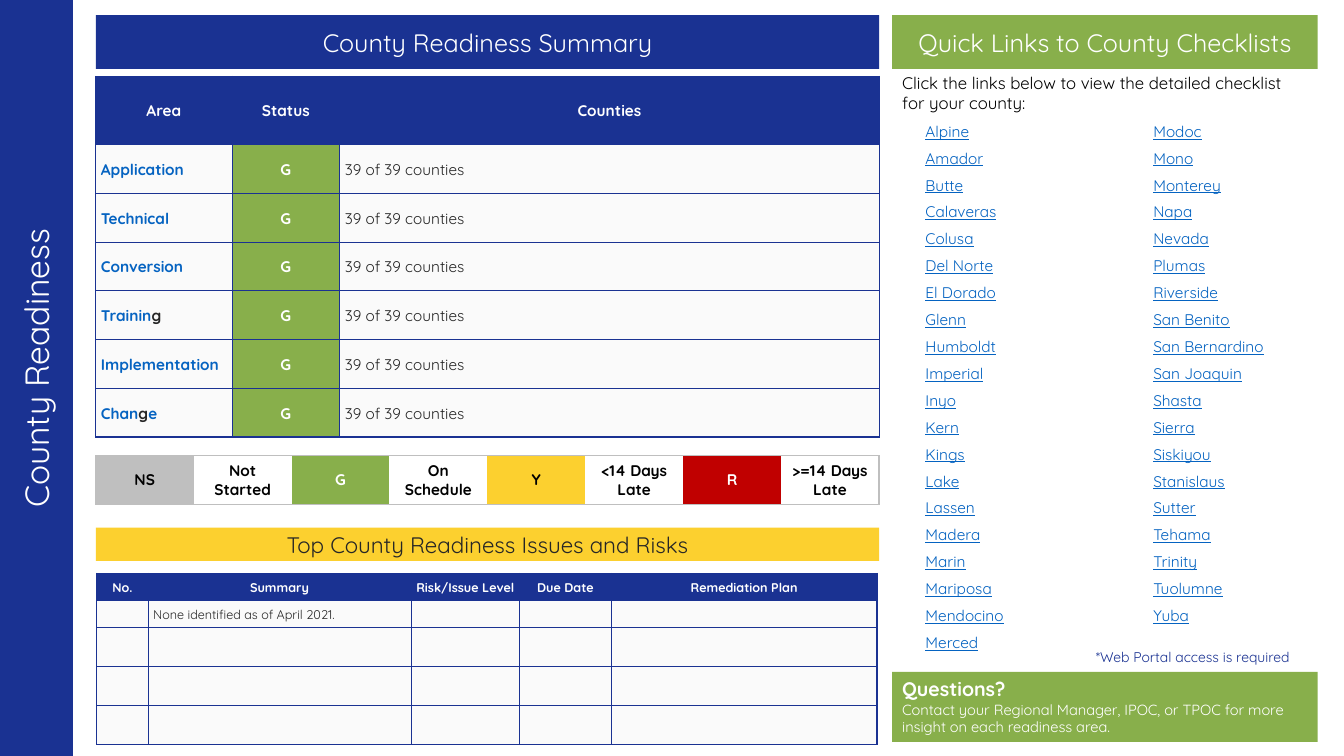
"""Builds the county readiness status slide."""
from lxml import etree
from pptx import Presentation, util as u
from pptx.dml.color import RGBColor
from pptx.enum import shapes, text
from pptx.oxml import ns

NAVY = RGBColor(0x1A, 0x32, 0x92)
GREEN = RGBColor(0x88, 0xAF, 0x4B)
GOLD = RGBColor(0xFC, 0xD0, 0x2F)
RED = RGBColor(0xC0, 0x00, 0x00)
GREY = RGBColor(0xBF, 0xBF, 0xBF)
PALE = RGBColor(0xFA, 0xFA, 0xFA)
DARK = RGBColor(0x26, 0x26, 0x26)
LINK = RGBColor(0x05, 0x63, 0xC1)
BLACK = RGBColor(0, 0, 0)
WHITE = RGBColor(255, 255, 255)

FONT = "Quicksand"
WIDE, HIGH = u.Inches(13.33), u.Inches(7.5)
MAIN = (7.13, 58.29)
SIDE = (66.39, 31.66)
LEFT, MID = text.PP_ALIGN.LEFT, text.PP_ALIGN.CENTER
TOP, CENTRE = text.MSO_ANCHOR.TOP, text.MSO_ANCHOR.MIDDLE

AREAS = [["Application"], ["Technical"], ["Conversion"], ["Trainin", "g"],
         ["Implementation"], ["Chan", "g", "e"]]
LEGEND = [("NS", "Not Started", GREY, BLACK), ("G", "On Schedule", GREEN, WHITE),
          ("Y", "<14 Days Late", GOLD, BLACK), ("R", ">=14 Days Late", RED, WHITE)]
HEADS = ["No.", "Summary", "Risk/Issue Level", "Due Date", "Remediation Plan"]
WEST = ["Alpine", "Amador", "Butte", "Calaveras", "Colusa", "Del Norte",
        "El Dorado", "Glenn", "Humboldt", "Imperial", "Inyo", "Kern", "Kings",
        "Lake", "Lassen", "Madera", "Marin", "Mariposa", "Mendocino", "Merced"]
EAST = ["Modoc", "Mono", "Monterey", "Napa", "Nevada", "Plumas", "Riverside",
        "San Benito", "San Bernardino", "San Joaquin", "Shasta", "Sierra",
        "Siskiyou", "Stanislaus", "Sutter", "Tehama", "Trinity", "Tuolumne", "Yuba"]


def place(x, y, w, h):
    """Turn percentages of the slide into left, top, width and height."""
    return [int(side * part / 100)
            for side, part in zip((WIDE, HIGH, WIDE, HIGH), (x, y, w, h))]


def style(para, size, color, bold=False, align=LEFT):
    """Set the look of a whole paragraph."""
    para.alignment = align
    font = para.font
    font.name, font.size, font.bold = FONT, u.Pt(size), bold
    font.color.rgb = color


def panel(slide, area, fill):
    """Draw a plain filled rectangle."""
    shape = slide.shapes.add_shape(shapes.MSO_SHAPE.RECTANGLE, *place(*area))
    shape.shadow.inherit = False
    shape.fill.solid()
    shape.fill.fore_color.rgb = fill
    shape.line.fill.background()
    return shape


def banner(slide, area, words, fill, size=18, color=WHITE):
    """Draw a coloured heading bar."""
    frame = panel(slide, area, fill).text_frame
    frame.vertical_anchor = CENTRE
    frame.text = words
    style(frame.paragraphs[0], size, color, align=MID)


def note(slide, area, lines, size, color, gap=0, under=False):
    """Add a text box with one paragraph for each line."""
    frame = slide.shapes.add_textbox(*place(*area)).text_frame
    frame.word_wrap = True
    frame.text = "\n".join(lines)
    for i, para in enumerate(frame.paragraphs):
        para.space_before = u.Pt(gap if i else 0)
        para.space_after = u.Pt(gap)
        style(para, size, color)
        para.font.underline = under


def grid(slide, area, cols, rows):
    """Add a table whose columns and rows share its size by weight."""
    box = place(*area)
    table = slide.shapes.add_table(len(rows), len(cols), *box).table
    table.first_row = table.horz_banding = False
    for col, part in zip(table.columns, cols):
        col.width = int(box[2] * part / sum(cols))
    for row, part in zip(table.rows, rows):
        row.height = int(box[3] * part / sum(rows))
    return table


def border(cell, widths, color):
    """Draw left, right, top and bottom cell lines; a zero width hides one."""
    props = cell._tc.get_or_add_tcPr()
    for side, width in zip("LRTB", widths):
        line = etree.SubElement(props, ns.qn("a:ln" + side), w=str(u.Pt(width)))
        kind = "a:solidFill" if width else "a:noFill"
        paint = etree.SubElement(line, ns.qn(kind))
        if width:
            etree.SubElement(paint, ns.qn("a:srgbClr"), val=str(color))


def rule(table):
    """Give a table thin inner lines, a thicker frame and narrow margins."""
    high, wide = len(table.rows), len(table.columns)
    for i in range(high):
        for j in range(wide):
            cell = table.cell(i, j)
            edges = (j == 0, j == wide - 1, i == 0, i == high - 1)
            border(cell, [1 if edge else 0.5 for edge in edges], NAVY)
            cell.margin_left = cell.margin_right = u.Inches(0.05)
            cell.margin_top = cell.margin_bottom = u.Inches(0.05)


def put(cell, runs, fill, size, color, bold=False, align=LEFT, space=1.07, other=DARK):
    """Fill a cell; every second run takes the other colour."""
    if fill is None:
        cell.fill.background()
    else:
        cell.fill.solid()
        cell.fill.fore_color.rgb = fill
    cell.vertical_anchor = CENTRE
    para = cell.text_frame.paragraphs[0]
    para.line_spacing = space
    style(para, size, color, bold, align)
    for i, words in enumerate(runs):
        run = para.add_run()
        run.text = words
        if len(runs) > 1:
            run.font.color.rgb = other if i % 2 else color


def status(slide):
    """Build the readiness table."""
    table = grid(slide, (MAIN[0], 10.1, MAIN[1], 47.73), (1.35, 1.07, 5.35),
                 [0.67] + [0.48] * len(AREAS))
    rule(table)
    for j, head in enumerate(("Area", "Status", "Counties")):
        put(table.cell(0, j), [head], NAVY, 11, WHITE, True, MID)
    for i, runs in enumerate(AREAS, 1):
        put(table.cell(i, 0), runs, PALE, 11, LINK, True)
        put(table.cell(i, 1), ["G"], GREEN, 11, WHITE, True, MID)
        put(table.cell(i, 2), ["39 of 39 counties"], PALE, 11, DARK)


def legend(slide):
    """Build the strip that explains the status codes."""
    count = 2 * len(LEGEND)
    table = grid(slide, (MAIN[0], 60.27, MAIN[1], 6.2), [1] * count, [1])
    for j in range(count):
        code, label, fill, color = LEGEND[j // 2]
        cell = table.cell(0, j)
        border(cell, (int(j == 0), int(j == count - 1), 1, 1), GREY)
        if j % 2:
            put(cell, [label], None, 11, BLACK, True, MID, 1)
        else:
            put(cell, [code], fill, 11, color, True, MID, 1)


def issues(slide):
    """Build the issues and risks table."""
    table = grid(slide, (7.2, 75.87, 58.06, 22.5), (0.51, 2.61, 1.08, 0.91, 2.64),
                 (0.27, 0.26, 0.39, 0.39, 0.39))
    rule(table)
    for j, head in enumerate(HEADS):
        put(table.cell(0, j), [head], NAVY, 9, WHITE, True, MID)
        for i in range(1, len(table.rows)):
            words = ["None identified as of April 2021."] if (i, j) == (1, 1) else []
            put(table.cell(i, j), words, PALE, 9, DARK)


def sidebar(slide):
    """Draw the side band and turn the title along it."""
    band = panel(slide, (0, 0, 5.42, 100), NAVY)
    title = slide.shapes.title
    title.element.addprevious(band.element)
    title.left, title.top, title.width, title.height = place(-9.08, 44.27, 23.48, 6.67)
    title.rotation = 270
    frame = title.text_frame
    frame.text = "County Readiness"
    frame.word_wrap = False
    frame.auto_size = text.MSO_AUTO_SIZE.NONE
    frame.vertical_anchor = TOP
    style(frame.paragraphs[0], 24, WHITE)


def contact(slide):
    """Draw the panel that says where to send questions."""
    frame = panel(slide, (SIDE[0], 88.87, SIDE[1], 9.27), GREEN).text_frame
    frame.vertical_anchor = TOP
    frame.text = ("Questions?\nContact your Regional Manager, IPOC, or TPOC "
                  "for more insight on each readiness area.")
    head, body = frame.paragraphs
    style(head, 14, WHITE, True)
    style(body, 10.5, WHITE)


def main():
    """Build and save the slide."""
    deck = Presentation()
    deck.slide_width, deck.slide_height = WIDE, HIGH
    slide = deck.slides.add_slide(deck.slide_layouts[5])
    sidebar(slide)
    banner(slide, (MAIN[0], 2, MAIN[1], 7.13), "County Readiness Summary", NAVY)
    status(slide)
    legend(slide)
    banner(slide, (MAIN[0], 69.8, MAIN[1], 4.4),
           "Top County Readiness Issues and Risks", GOLD, 16, DARK)
    issues(slide)
    banner(slide, (SIDE[0], 2, SIDE[1], 7.13), "Quick Links to County Checklists", GREEN)
    note(slide, (SIDE[0], 8.97, SIDE[1], 6.67),
         ["Click the links below to view the detailed checklist for your county:"], 12, BLACK)
    for x, names in ((68.12, WEST), (85.07, EAST)):
        note(slide, (x, 15.47, 12.98, 3.6 * len(names)), names, 11, LINK, 3, True)
    note(slide, (80.8, 85.07, 17.25, 3.73), ["*Web Portal access is required"], 10, NAVY)
    contact(slide)
    deck.save("out.pptx")


if __name__ == "__main__":
    main()
